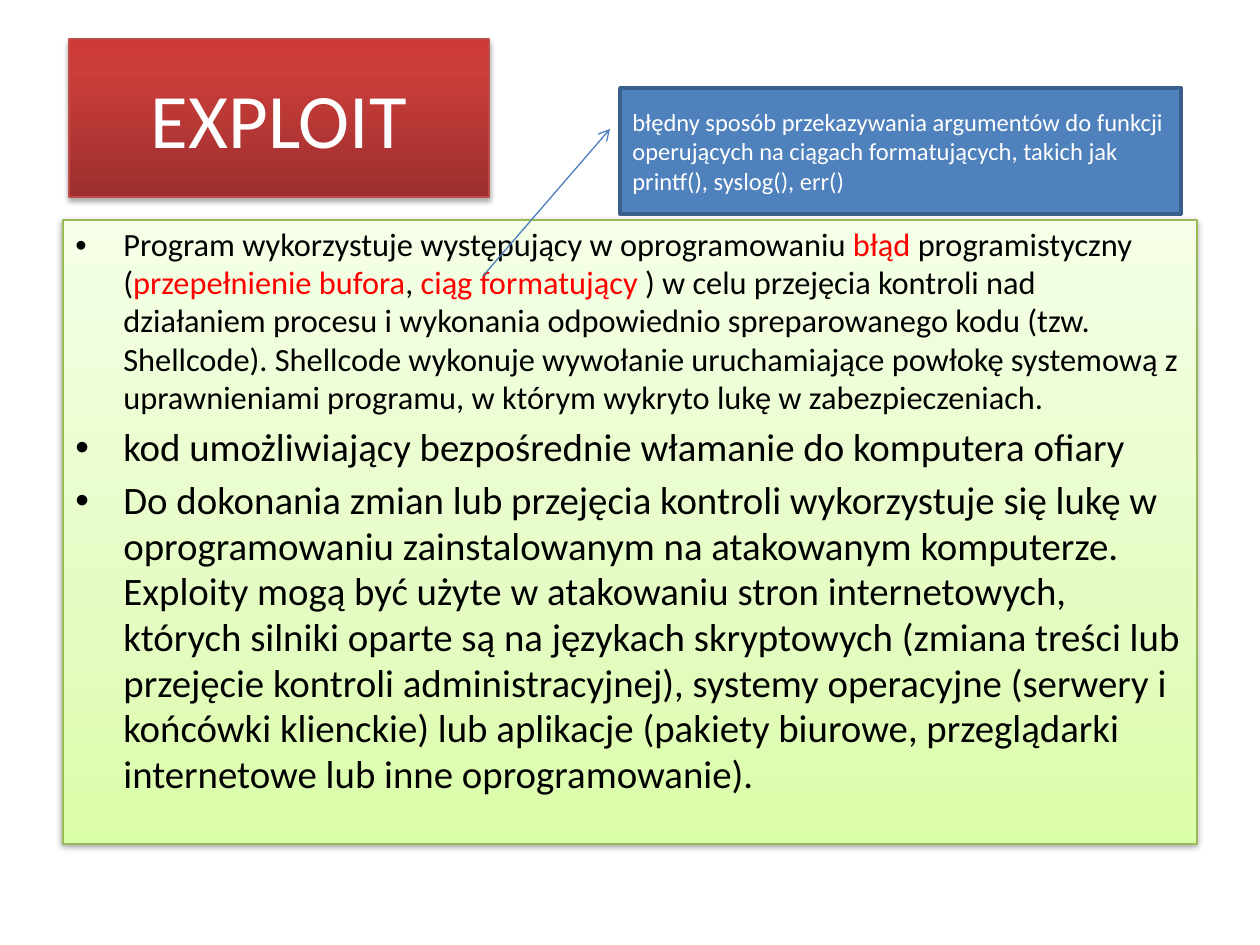
from lxml.etree import SubElement
from pptx import Presentation
from pptx.dml.color import RGBColor
from pptx.enum.shapes import MSO_CONNECTOR, MSO_SHAPE
from pptx.enum.text import MSO_ANCHOR, MSO_AUTO_SIZE, PP_ALIGN
from pptx.oxml.ns import qn
from pptx.util import Emu, Pt

PX_PER_INCH = 126
WHITE = RGBColor(0xFF, 0xFF, 0xFF)
BLACK = RGBColor(0, 0, 0)
RED = RGBColor(0xFF, 0, 0)
TITLE_LINE = RGBColor(0xBF, 0x4C, 0x48)
BODY_LINE = RGBColor(0x98, 0xB9, 0x55)
NOTE_FILL = RGBColor(0x4F, 0x81, 0xBD)
NOTE_LINE = RGBColor(0x3A, 0x5F, 0x8C)
ARROW_LINE = RGBColor(0x4B, 0x7E, 0xBC)
# Gradient stops run from the bottom edge to the top edge
TITLE_STOPS = [(0, RGBColor(0x9C, 0x2F, 0x2D)), (80, RGBColor(0xCB, 0x3E, 0x3A)),
               (100, RGBColor(0xCE, 0x3B, 0x37))]
BODY_STOPS = [(0, RGBColor(0xDA, 0xFD, 0xA7)), (35, RGBColor(0xE4, 0xFC, 0xC2)),
              (100, RGBColor(0xF5, 0xFF, 0xE7))]

EXPLOIT_POINTS = [
    (18.5, [
        ("Program wykorzystuje występujący w oprogramowaniu ", BLACK),
        ("błąd", RED),
        (" programistyczny (", BLACK),
        ("przepełnienie bufora", RED),
        (", ", BLACK),
        ("ciąg formatujący ", RED),
        (") w celu przejęcia kontroli nad działaniem procesu i wykonania "
         "odpowiednio spreparowanego kodu (tzw. Shellcode). Shellcode wykonuje "
         "wywołanie uruchamiające powłokę systemową z uprawnieniami programu, "
         "w którym wykryto lukę w zabezpieczeniach.", BLACK),
    ]),
    (22.2, [("kod umożliwiający bezpośrednie włamanie do komputera ofiary", BLACK)]),
    (22.2, [
        ("Do dokonania zmian lub przejęcia kontroli wykorzystuje się lukę w "
         "oprogramowaniu zainstalowanym na atakowanym komputerze. Exploity mogą "
         "być użyte w atakowaniu stron internetowych, których silniki oparte są "
         "na językach skryptowych (zmiana treści lub przejęcie kontroli "
         "administracyjnej), systemy operacyjne (serwery i końcówki klienckie) "
         "lub aplikacje (pakiety biurowe, przeglądarki internetowe lub inne "
         "oprogramowanie).", BLACK),
    ]),
]
FORMAT_STRING_NOTE = [
    "błędny sposób przekazywania argumentów do funkcji operujących na ciągach "
    "formatujących, takich jak",
    "printf(), syslog(), err()",
]


def px(length):
    return Emu(round(length * 914400 / PX_PER_INCH))


def set_attributes(target, formats):
    for name, value in formats.items():
        setattr(target, name, value)


def place(shape, box):
    set_attributes(shape, dict(zip(("left", "top", "width", "height"), map(px, box))))


def add_rectangle(slide, box):
    return slide.shapes.add_shape(MSO_SHAPE.RECTANGLE, *map(px, box))


def set_outline(shape, color, width):
    shape.line.color.rgb = color
    shape.line.width = Pt(width)


def set_gradient(shape, stops):
    shape.fill.solid()
    solid = shape.fill._xPr.find(qn("a:solidFill"))
    gradient = solid.makeelement(qn("a:gradFill"), {"rotWithShape": "1"})
    stop_list = SubElement(gradient, qn("a:gsLst"))
    for percent, color in stops:
        stop = SubElement(stop_list, qn("a:gs"), pos=str(percent * 1000))
        SubElement(stop, qn("a:srgbClr"), val=str(color))
    SubElement(gradient, qn("a:lin"), ang="16200000", scaled="0")
    solid.getparent().replace(solid, gradient)


def add_drop_shadow(shape, distance, opacity):
    shape.shadow.inherit = False
    effects = shape._element.spPr.find(qn("a:effectLst"))
    shadow = SubElement(effects, qn("a:outerShdw"), blurRad=str(Pt(3.1)),
                        dist=str(Pt(distance)), dir="5400000", rotWithShape="0")
    black = SubElement(shadow, qn("a:srgbClr"), val=str(BLACK))
    SubElement(black, qn("a:alpha"), val=str(opacity * 1000))


def add_run(paragraph, text, size, color):
    run = paragraph.add_run()
    run.text = text
    set_attributes(run.font, {"name": "Calibri", "size": Pt(size)})
    run.font.color.rgb = color


def prepare_text(shape, anchor):
    set_attributes(shape.text_frame, {
        "word_wrap": True, "auto_size": MSO_AUTO_SIZE.NONE, "vertical_anchor": anchor})


def paragraph_at(frame, index):
    return frame.paragraphs[0] if index == 0 else frame.add_paragraph()


def add_bullet(paragraph):
    properties = paragraph._p.get_or_add_pPr()
    indent = px(48)
    properties.set("marL", str(indent))
    properties.set("indent", str(-indent))
    SubElement(properties, qn("a:buFont"), typeface="Arial")
    SubElement(properties, qn("a:buChar"), char="•")


def build_title(slide, box):
    title = slide.shapes.title
    place(title, box)
    set_gradient(title, TITLE_STOPS)
    set_outline(title, TITLE_LINE, 0.75)
    add_drop_shadow(title, 1.8, 35)
    prepare_text(title, MSO_ANCHOR.MIDDLE)
    heading = title.text_frame.paragraphs[0]
    heading.alignment = PP_ALIGN.CENTER
    add_run(heading, "EXPLOIT", 44, WHITE)


def build_body(slide, box):
    body = add_rectangle(slide, box)
    set_gradient(body, BODY_STOPS)
    set_outline(body, BODY_LINE, 0.75)
    add_drop_shadow(body, 1.6, 38)
    prepare_text(body, MSO_ANCHOR.TOP)
    for index, (size, pieces) in enumerate(EXPLOIT_POINTS):
        point = paragraph_at(body.text_frame, index)
        set_attributes(point, {"alignment": PP_ALIGN.LEFT, "line_spacing": 0.98,
                               "space_before": Pt(size * 0.2)})
        add_bullet(point)
        for text, color in pieces:
            add_run(point, text, size, color)


def build_note(slide, box):
    note = add_rectangle(slide, box)
    note.shadow.inherit = False
    note.fill.solid()
    note.fill.fore_color.rgb = NOTE_FILL
    set_outline(note, NOTE_LINE, 2)
    prepare_text(note, MSO_ANCHOR.MIDDLE)
    for index, text in enumerate(FORMAT_STRING_NOTE):
        sentence = paragraph_at(note.text_frame, index)
        sentence.alignment = PP_ALIGN.LEFT
        add_run(sentence, text, 14, WHITE)


def build_arrow(slide, start, end):
    arrow = slide.shapes.add_connector(
        MSO_CONNECTOR.STRAIGHT, *map(px, start), *map(px, end))
    set_outline(arrow, ARROW_LINE, 0.75)
    SubElement(arrow.line._get_or_add_ln(), qn("a:tailEnd"), type="arrow")
    SubElement(arrow._element.spPr, qn("a:effectLst"))


def main():
    presentation = Presentation()
    set_attributes(presentation, {"slide_width": px(1260), "slide_height": px(945)})
    slide = presentation.slides.add_slide(presentation.slide_layouts[5])
    build_title(slide, (69, 39, 420, 158))
    build_body(slide, (63, 220, 1134, 624))
    build_note(slide, (620, 88, 561, 126))
    build_arrow(slide, (483, 276), (610, 129))
    presentation.save("out.pptx")


if __name__ == "__main__":
    main()
